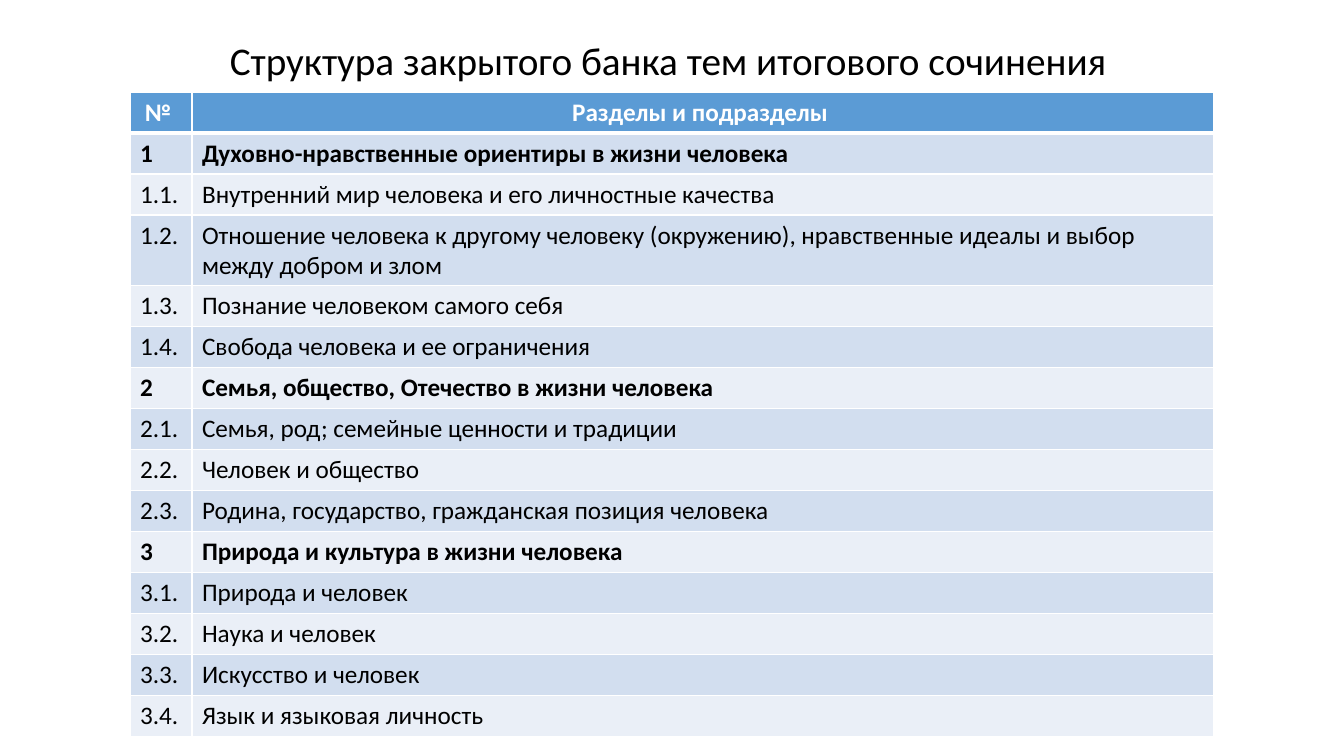
import pptx
import pptx.dml.color
import pptx.enum.text
import pptx.oxml.ns
import pptx.util
import lxml.etree

PX = 914400 / 100.8
FONT = "Calibri"
COLORS = {
    "text": "000000",
    "header_text": "FFFFFF",
    "border": "FFFFFF",
    "header": "5B9BD5",
    "odd_row": "D2DEEF",
    "even_row": "EAEFF7",
}
CENTER = pptx.enum.text.PP_ALIGN.CENTER
LEFT = pptx.enum.text.PP_ALIGN.LEFT
MIDDLE = pptx.enum.text.MSO_ANCHOR.MIDDLE


def px(*lengths):
    return [pptx.util.Emu(round(length * PX)) for length in lengths]


def write(paragraph, wording, size, color, bold, align):
    paragraph.alignment = align
    run = paragraph.add_run()
    run.text = wording
    run.font.name = FONT
    run.font.size = pptx.util.Pt(size)
    run.font.bold = bold
    run.font.color.rgb = pptx.dml.color.RGBColor.from_string(COLORS[color])


sections = [
    ("Духовно-нравственные ориентиры в жизни человека", [
        "Внутренний мир человека и его личностные качества",
        "Отношение человека к другому человеку (окружению), нравственные идеалы "
        "и выбор между добром и злом",
        "Познание человеком самого себя",
        "Свобода человека и ее ограничения",
    ]),
    ("Семья, общество, Отечество в жизни человека", [
        "Семья, род; семейные ценности и традиции",
        "Человек и общество",
        "Родина, государство, гражданская позиция человека",
    ]),
    ("Природа и культура в жизни человека", [
        "Природа и человек",
        "Наука и человек",
        "Искусство и человек",
        "Язык и языковая личность",
    ]),
]

entries = [("№ ", "Разделы и подразделы ", True)]
for number, (section, topics) in enumerate(sections, 1):
    entries.append((f"{number}", section, True))
    for part, topic in enumerate(topics, 1):
        entries.append((f"{number}.{part}.", topic, False))

deck = pptx.Presentation()
deck.slide_width, deck.slide_height = px(1344, 756)
slide = deck.slides.add_slide(deck.slide_layouts[6])

title = slide.shapes.add_textbox(*px(93, 40, 1159, 46)).text_frame
title.word_wrap = True
title.vertical_anchor = MIDDLE
title.paragraphs[0].line_spacing = 0.9
write(title.paragraphs[0], "Структура закрытого банка тем итогового сочинения ",
      28, "text", False, CENTER)

row_height = 41
number_width, topic_width = 62, 1022
topic_table = slide.shapes.add_table(
    len(entries), 2,
    *px(130, 92, number_width + topic_width, row_height * len(entries))).table
topic_table.columns[0].width, topic_table.columns[1].width = px(number_width, topic_width)

for index, (number, topic, bold) in enumerate(entries):
    topic_table.rows[index].height = px(row_height)[0]
    is_header = index == 0
    fill = "header" if is_header else "odd_row" if index % 2 else "even_row"
    thickness = {"L": 1, "R": 1, "T": 3 if index == 1 else 1, "B": 3 if is_header else 1}
    for cell, wording in zip(topic_table.rows[index].cells, (number, topic)):
        properties = cell._tc.get_or_add_tcPr()
        for side, points in thickness.items():
            border = lxml.etree.SubElement(
                properties, pptx.oxml.ns.qn(f"a:ln{side}"), w=str(pptx.util.Pt(points)))
            paint = lxml.etree.SubElement(border, pptx.oxml.ns.qn("a:solidFill"))
            lxml.etree.SubElement(
                paint, pptx.oxml.ns.qn("a:srgbClr"), val=COLORS["border"])
        cell.fill.solid()
        cell.fill.fore_color.rgb = pptx.dml.color.RGBColor.from_string(COLORS[fill])
        write(cell.text_frame.paragraphs[0], wording, 18,
              "header_text" if is_header else "text", bold,
              CENTER if is_header else LEFT)

deck.save("out.pptx")
